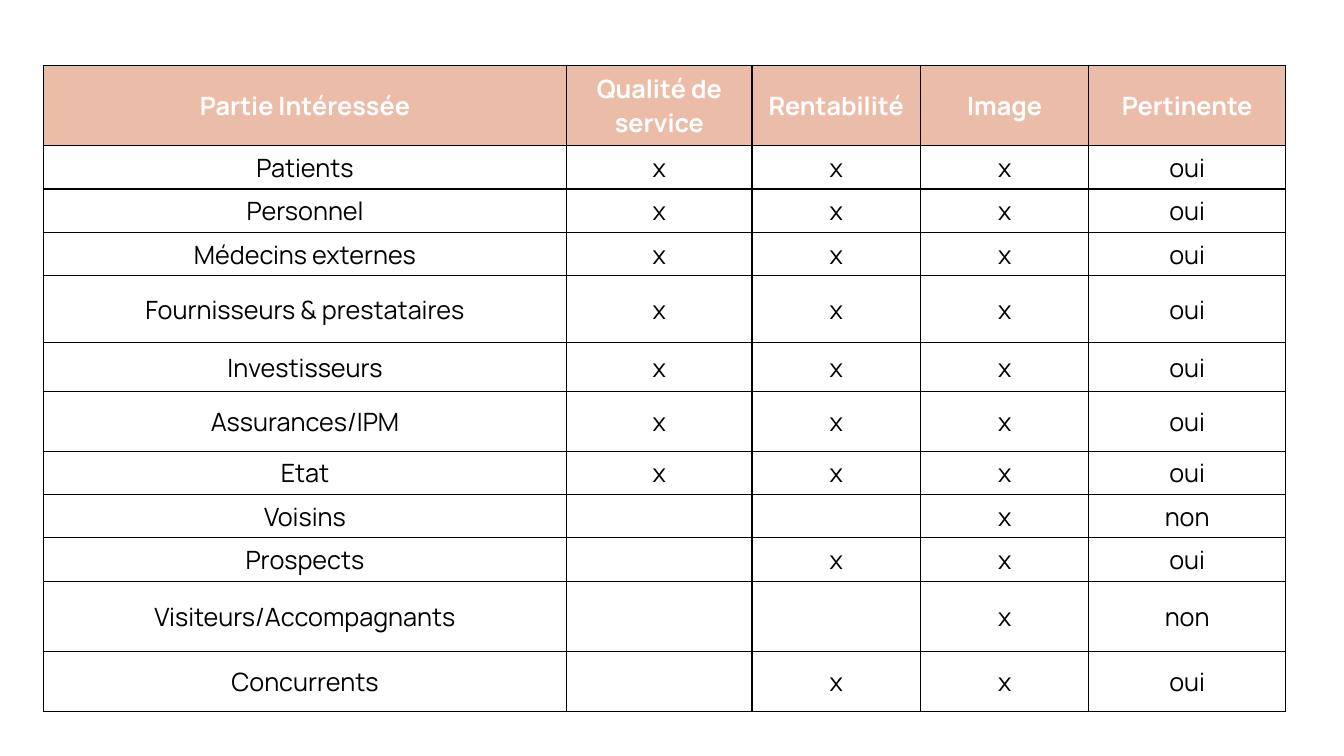
from dataclasses import dataclass

from lxml import etree
from pptx import Presentation
from pptx.dml.color import RGBColor
from pptx.enum.text import MSO_ANCHOR, PP_ALIGN
from pptx.oxml.ns import qn
from pptx.util import Inches, Pt

CENTER = PP_ALIGN.CENTER
MIDDLE = MSO_ANCHOR.MIDDLE


@dataclass(frozen=True)
class Theme:
    font: str = "Manrope"
    size: int = 18
    line: int = 1
    pad: float = 0.01
    head: str = "EBBDA9"
    light: str = "FFFFFF"
    ink: str = "000000"


class Deck:
    def __init__(self, theme):
        self.theme = theme
        self.show = Presentation()
        self.show.slide_width = Inches(13.33)
        self.show.slide_height = Inches(7.5)
        self.slide = self.show.slides.add_slide(self.show.slide_layouts[6])

    def wide(self, share):
        return round(self.show.slide_width * share / 100)

    def high(self, share):
        return round(self.show.slide_height * share / 100)

    def table(self, left, top, cols, rows, data):
        frame = self.slide.shapes.add_table(
            len(rows), len(cols), self.wide(left), self.high(top),
            self.wide(sum(cols)), self.high(sum(rows)))
        table = frame.table
        table.first_row = table.horz_banding = False
        for col, share in zip(table.columns, cols):
            col.width = self.wide(share)
        for row, share in zip(table.rows, rows):
            row.height = self.high(share)
        for y, texts in enumerate(data):
            for x, text in enumerate(texts):
                self.cell(table.cell(y, x), text, y == 0)

    def cell(self, cell, text, head):
        theme = self.theme
        cell.vertical_anchor = MIDDLE
        cell.margin_left = cell.margin_right = Inches(theme.pad)
        cell.margin_top = Inches(theme.pad)
        cell.margin_bottom = 0
        self.border(cell)
        if head:
            cell.fill.solid()
            cell.fill.fore_color.rgb = RGBColor.from_string(theme.head)
        else:
            cell.fill.background()
        para = cell.text_frame.paragraphs[0]
        para.alignment = CENTER
        if text:
            self.run(para, text, theme.light if head else theme.ink, head)

    def run(self, para, text, color, bold):
        run = para.add_run()
        run.text = text
        run.font.name = self.theme.font
        run.font.size = Pt(self.theme.size)
        run.font.bold = bold
        run.font.color.rgb = RGBColor.from_string(color)

    def border(self, cell):
        props = cell._tc.get_or_add_tcPr()
        for side in ("lnL", "lnR", "lnT", "lnB"):
            line = etree.SubElement(props, qn(f"a:{side}"), w=str(Pt(self.theme.line)))
            fill = etree.SubElement(line, qn("a:solidFill"))
            etree.SubElement(fill, qn("a:srgbClr"), val=self.theme.ink)


HEAD = ("Partie Intéressée", "Qualité de service", "Rentabilité", "Image", "Pertinente")
PARTIES = (
    ("Patients", "x", "x", "x", "oui"),
    ("Personnel", "x", "x", "x", "oui"),
    ("Médecins externes", "x", "x", "x", "oui"),
    ("Fournisseurs & prestataires", "x", "x", "x", "oui"),
    ("Investisseurs", "x", "x", "x", "oui"),
    ("Assurances/IPM", "x", "x", "x", "oui"),
    ("Etat", "x", "x", "x", "oui"),
    ("Voisins", "", "", "x", "non"),
    ("Prospects", "", "x", "x", "oui"),
    ("Visiteurs/Accompagnants", "", "", "x", "non"),
    ("Concurrents", "", "x", "x", "oui"),
)
COLS = (38.93, 13.8, 12.53, 12.53, 14.63)
BASE = 5.74
ROWS = (10.6, BASE, BASE, BASE, 8.8, 6.53, 7.87, BASE, BASE, BASE, 9.33, 7.87)


def main():
    deck = Deck(Theme())
    deck.table(3.23, 8.67, COLS, ROWS, (HEAD, *PARTIES))
    deck.show.save("out.pptx")


if __name__ == "__main__":
    main()
